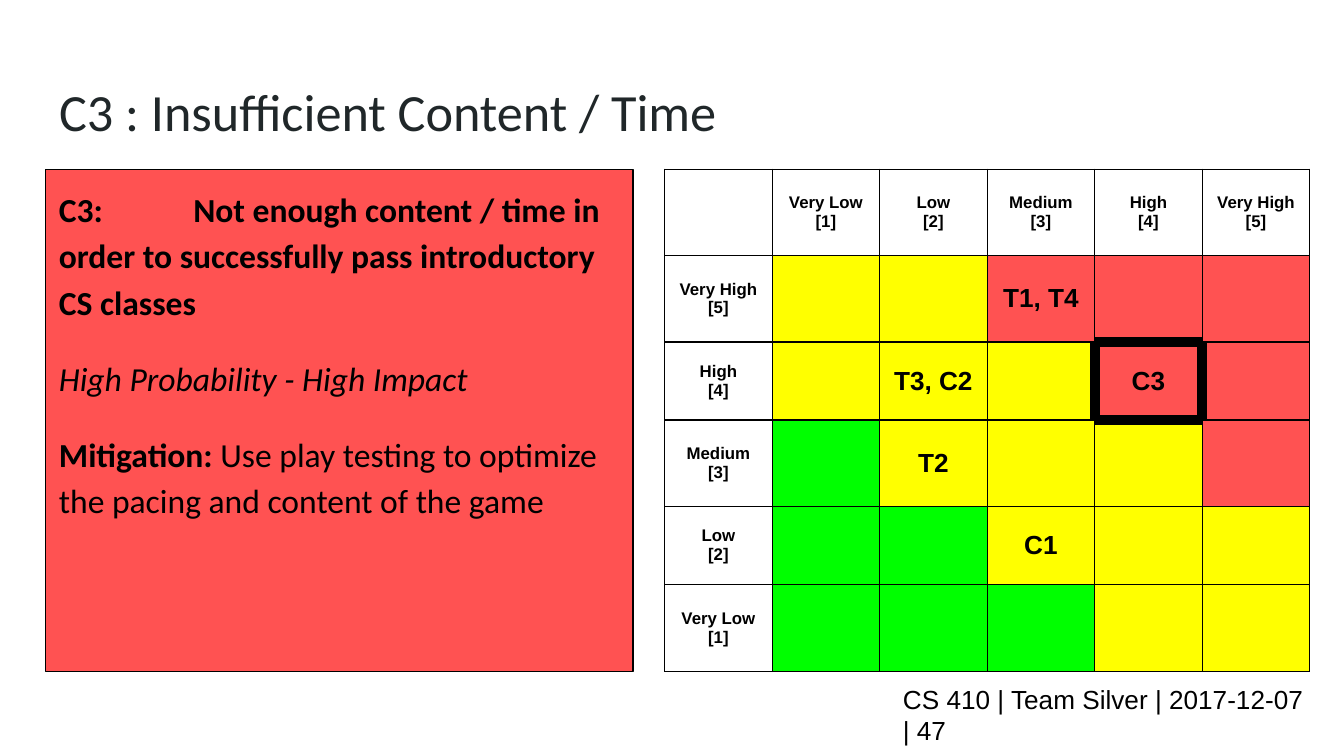
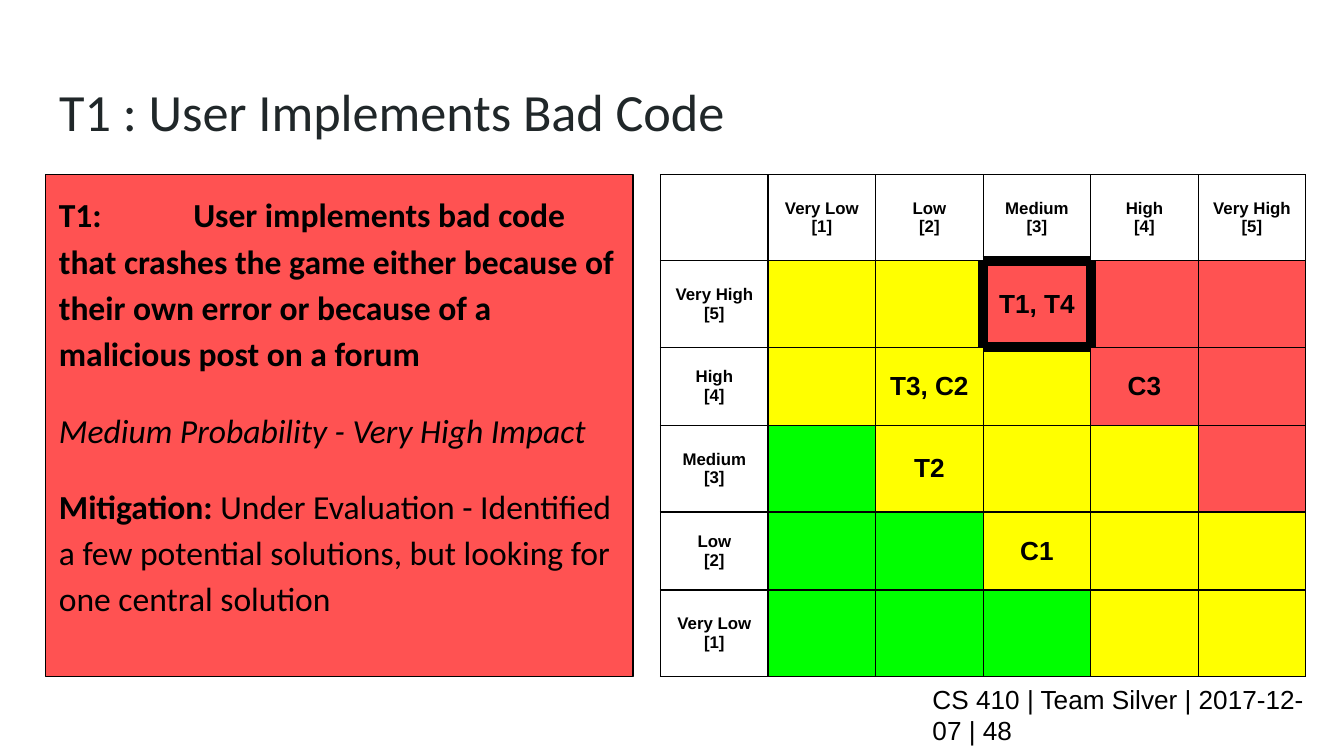
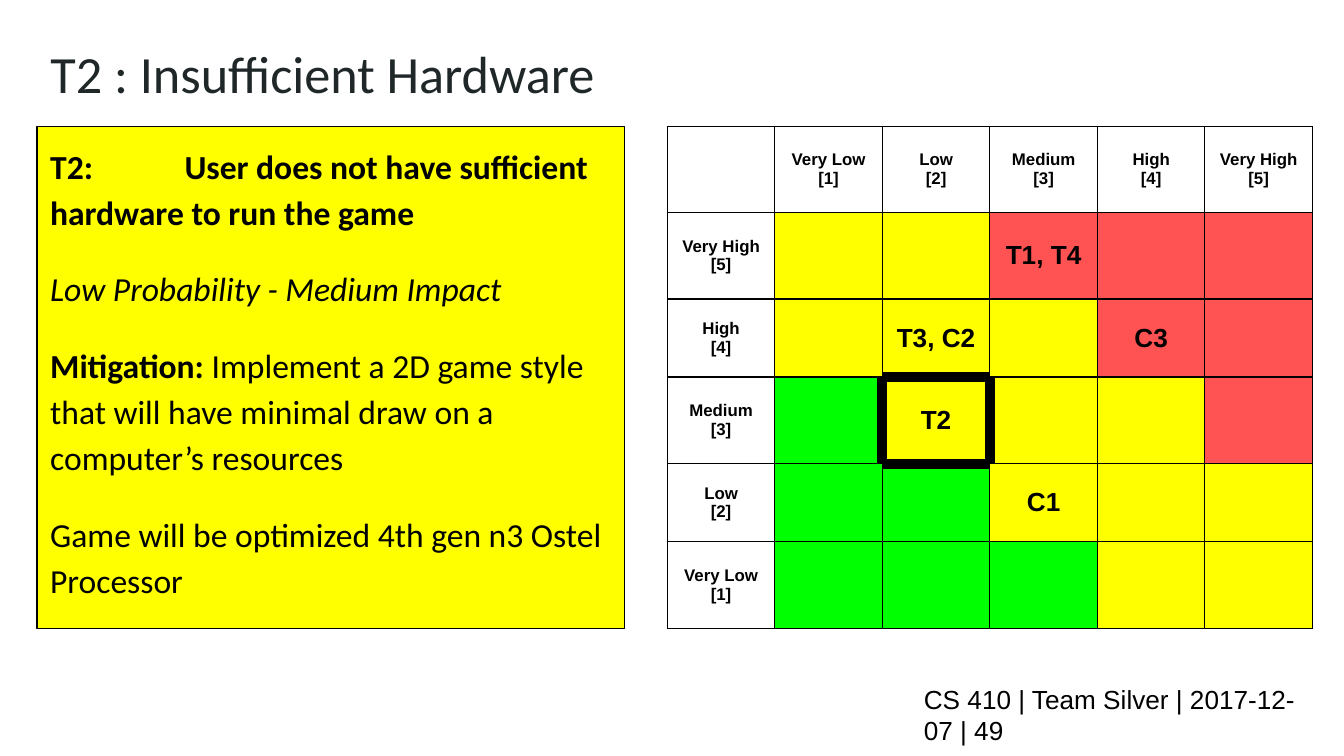
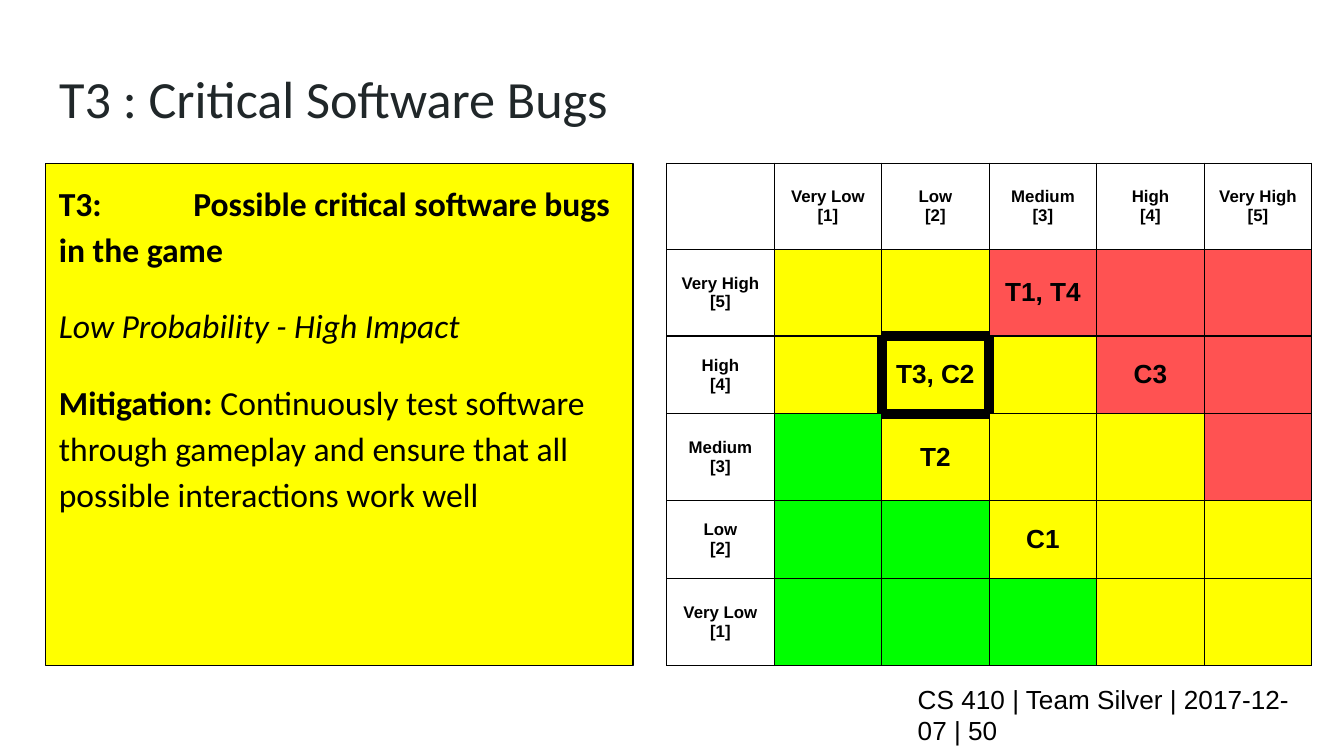
from lxml import etree
from pptx import Presentation
from pptx.dml.color import RGBColor
from pptx.enum.shapes import MSO_SHAPE
from pptx.enum.text import MSO_ANCHOR, MSO_AUTO_SIZE, PP_ALIGN
from pptx.oxml.ns import qn
from pptx.util import Pt

RECTANGLE = MSO_SHAPE.RECTANGLE
TOP, MIDDLE = MSO_ANCHOR.TOP, MSO_ANCHOR.MIDDLE
NO_AUTOFIT = MSO_AUTO_SIZE.NONE
LEFT, CENTER = PP_ALIGN.LEFT, PP_ALIGN.CENTER

EMU_PER_PX = 4572
TITLE_ONLY = 5
INSET = 20
TAB_STOP = 200
FOOTER_RIGHT = 1973
COLUMN_WIDTH = 160
ROW_HEIGHTS = [128, 129, 116, 129, 116, 129]
THIN, THICK = 0.75, 6

COLORS = {
    "title": "202729",
    "ink": "000000",
    "R": "FF5252",
    "Y": "FFFF00",
    "G": "00FF00",
}
HEADING_FONT = "Calibri"
MATRIX_FONT = "Arial"

LEVELS = ["Very Low", "Low", "Medium", "High", "Very High"]
SEVERITY = ["YYRRR", "YYYRR", "GYYYR", "GGYYY", "GGGYY"]
RISKS = {(1, 3): "T1, T4", (2, 2): "T3, C2", (2, 4): "C3", (3, 2): "T2", (4, 3): "C1"}
SIDES = {"a:lnL": (0, -1), "a:lnR": (0, 1), "a:lnT": (-1, 0), "a:lnB": (1, 0)}

SLIDES = [
    {
        "title": "C3 : Insufficient Content / Time",
        "title_at": (68, 98),
        "severity": "R",
        "panel_at": (68, 252),
        "statement": "C3:\tNot enough content / time in order to successfully pass introductory CS classes",
        "rating": "High Probability - High Impact",
        "mitigation": ["Use play testing to optimize the pacing and content of the game"],
        "matrix_at": (989, 252),
        "focus": (2, 4),
        "footer_left": 1324,
        "number": 47,
    },
    {
        "title": "T1 : User Implements Bad Code",
        "title_at": (68, 98),
        "severity": "R",
        "panel_at": (68, 260),
        "statement": "T1:\tUser implements bad code that crashes the game either because of "
                     "their own error or because of a malicious post on a forum",
        "rating": "Medium Probability - Very High Impact",
        "mitigation": ["Under Evaluation - Identified a few potential solutions, "
                       "but looking for one central solution"],
        "matrix_at": (983, 260),
        "focus": (1, 3),
        "footer_left": 1368,
        "number": 48,
    },
    {
        "title": "T2 : Insufficient Hardware",
        "title_at": (55, 42),
        "severity": "Y",
        "panel_at": (55, 188),
        "statement": "T2:\tUser does not have sufficient hardware to run the game",
        "rating": "Low Probability - Medium Impact",
        "mitigation": ["Implement a 2D game style that will have minimal draw on a computer’s resources",
                       "Game will be optimized 4th gen n3 Ostel Processor"],
        "matrix_at": (993, 188),
        "focus": (3, 2),
        "footer_left": 1355,
        "number": 49,
    },
    {
        "title": "T3 : Critical Software Bugs",
        "title_at": (68, 78),
        "severity": "Y",
        "panel_at": (68, 243),
        "statement": "T3:\tPossible critical software bugs in the game",
        "rating": "Low Probability - High Impact",
        "mitigation": ["Continuously test software through gameplay and ensure that all "
                       "possible interactions work well"],
        "matrix_at": (992, 243),
        "focus": (2, 2),
        "footer_left": 1346,
        "number": 50,
    },
]


def px(length):
    return length * EMU_PER_PX


def box(left, top, width, height):
    return [px(length) for length in (left, top, width, height)]


def rgb(name):
    return RGBColor.from_string(COLORS[name])


def set_font(paragraph, name, size, color="ink", bold=False, italic=False):
    font = paragraph.font
    font.name, font.size = name, Pt(size)
    font.bold, font.italic = bold, italic
    font.color.rgb = rgb(color)


def set_frame(frame, anchor):
    frame.word_wrap = True
    frame.auto_size = NO_AUTOFIT
    frame.vertical_anchor = anchor
    frame.margin_left = frame.margin_right = px(INSET)
    frame.margin_top = frame.margin_bottom = px(INSET)


def set_tab_stop(paragraph):
    properties = paragraph._p.get_or_add_pPr()
    stops = etree.Element(qn("a:tabLst"))
    etree.SubElement(stops, qn("a:tab"), pos=str(px(TAB_STOP)), algn="l")
    properties.find(qn("a:defRPr")).addprevious(stops)


def place_title(slide, text, position):
    title = slide.shapes.title
    title.left, title.top, title.width, title.height = box(*position, 1864, 126)
    set_frame(title.text_frame, TOP)
    title.text_frame.text = text
    heading = title.text_frame.paragraphs[0]
    heading.alignment = LEFT
    set_font(heading, HEADING_FONT, 28, "title")


def add_footer(slide, left, number):
    footer = slide.shapes.add_textbox(*box(left, 1020, FOOTER_RIGHT - left, 86))
    set_frame(footer.text_frame, MIDDLE)
    footer.text_frame.text = f"CS 410 | Team Silver | 2017-12-07 | {number}"
    set_font(footer.text_frame.paragraphs[0], MATRIX_FONT, 14)


def add_risk_panel(slide, position, severity, statement, rating, mitigation):
    panel = slide.shapes.add_shape(RECTANGLE, *box(*position, 874, 747))
    panel.shadow.inherit = False
    panel.fill.solid()
    panel.fill.fore_color.rgb = rgb(severity)
    panel.line.color.rgb = rgb("ink")
    panel.line.width = Pt(THIN)
    frame = panel.text_frame
    set_frame(frame, TOP)
    frame.text = "\n".join([statement, rating, "Mitigation: ", *mitigation[1:]])
    for index, paragraph in enumerate(frame.paragraphs):
        paragraph.alignment = LEFT
        paragraph.line_spacing = 1.15
        paragraph.space_after = Pt(16)
        set_font(paragraph, HEADING_FONT, 18, bold=index == 0, italic=index == 1)
    set_tab_stop(frame.paragraphs[0])
    plan = frame.paragraphs[2]
    plan.runs[0].font.bold = True
    plan.add_run().text = mitigation[0]


def set_borders(cell, position, focus):
    properties = cell._tc.get_or_add_tcPr()
    row, column = position
    for side, (down, across) in SIDES.items():
        touches_focus = focus in (position, (row + down, column + across))
        border = etree.SubElement(properties, qn(side))
        border.set("w", str(Pt(THICK if touches_focus else THIN)))
        fill = etree.SubElement(border, qn("a:solidFill"))
        etree.SubElement(fill, qn("a:srgbClr")).set("val", COLORS["ink"])


def level_label(index):
    return f"{LEVELS[index]}\n[{index + 1}]"


def matrix_text(row, column):
    if row and column:
        return RISKS.get((row, column), "")
    if column:
        return level_label(column - 1)
    return level_label(len(LEVELS) - row) if row else ""


def fill_matrix_cell(cell, position, focus):
    row, column = position
    is_rated = row > 0 and column > 0
    set_borders(cell, position, focus)
    if is_rated:
        cell.fill.solid()
        cell.fill.fore_color.rgb = rgb(SEVERITY[row - 1][column - 1])
    else:
        cell.fill.background()
    cell.vertical_anchor = MIDDLE
    cell.margin_left = cell.margin_right = px(INSET)
    cell.margin_top = cell.margin_bottom = px(INSET)
    cell.text = matrix_text(row, column)
    for paragraph in cell.text_frame.paragraphs:
        paragraph.alignment = CENTER
        set_font(paragraph, MATRIX_FONT, 14 if is_rated else 9, bold=True)


def add_risk_matrix(slide, position, focus):
    size = len(ROW_HEIGHTS)
    area = box(*position, size * COLUMN_WIDTH, sum(ROW_HEIGHTS))
    matrix = slide.shapes.add_table(size, size, *area).table
    matrix.first_row = matrix.horz_banding = False
    for column in matrix.columns:
        column.width = px(COLUMN_WIDTH)
    for row, height in enumerate(ROW_HEIGHTS):
        matrix.rows[row].height = px(height)
        for column in range(size):
            fill_matrix_cell(matrix.cell(row, column), (row, column), focus)


def main():
    deck = Presentation()
    deck.slide_width, deck.slide_height = px(2000), px(1125)
    for risk in SLIDES:
        slide = deck.slides.add_slide(deck.slide_layouts[TITLE_ONLY])
        place_title(slide, risk["title"], risk["title_at"])
        add_footer(slide, risk["footer_left"], risk["number"])
        add_risk_panel(slide, risk["panel_at"], risk["severity"], risk["statement"],
                       risk["rating"], risk["mitigation"])
        add_risk_matrix(slide, risk["matrix_at"], risk["focus"])
    deck.save("out.pptx")


if __name__ == "__main__":
    main()
